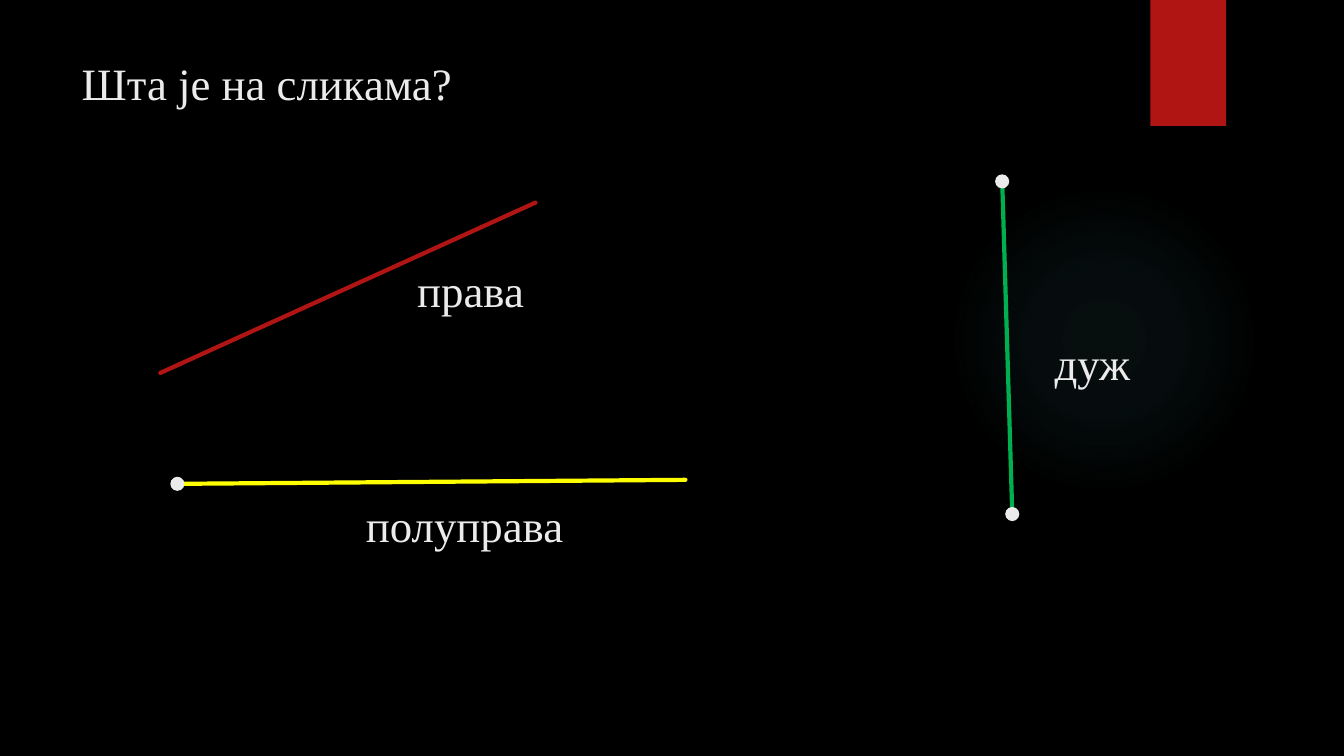
import pptx
import pptx.dml.color
import pptx.enum.shapes
import pptx.enum.text
import pptx.oxml
import pptx.oxml.ns
import pptx.util

WIDTH, HEIGHT = pptx.util.Inches(13.33), pptx.util.Inches(7.5)
FONT = "Times New Roman"
COLORS = {
    "background": "000000",
    "text": "EBEBEB",
    "red": "B01513",
    "yellow": "FFFF00",
    "green": "00B050",
    "glow": "50B9C1",
}
GLOW_STOPS = [(0, 7), (36, 6), (69, 0)]  # position and opacity in percent
DOT_WIDTH = 1.05  # percent of the slide's width
DOT_HEIGHT = DOT_WIDTH * WIDTH / HEIGHT


def color(name):
    return pptx.dml.color.RGBColor.from_string(COLORS[name])


def place(*shares):
    """Turn percentages of the slide's width and height, in turn, into lengths."""
    return [round((HEIGHT if index % 2 else WIDTH) * share / 100)
            for index, share in enumerate(shares)]


def add_plain_shape(slide, kind, box, fill):
    shape = slide.shapes.add_shape(kind, *place(*box))
    shape.shadow.inherit = False
    shape.fill.solid()
    shape.fill.fore_color.rgb = color(fill)
    shape.line.fill.background()
    return shape


def add_glow(slide, box):
    shape = add_plain_shape(slide, pptx.enum.shapes.MSO_SHAPE.OVAL, box, "glow")
    stops = "".join(
        f'<a:gs pos="{position * 1000}"><a:srgbClr val="{COLORS["glow"]}">'
        f'<a:alpha val="{opacity * 1000}"/></a:srgbClr></a:gs>'
        for position, opacity in GLOW_STOPS)
    gradient = pptx.oxml.parse_xml(
        f'<a:gradFill {pptx.oxml.ns.nsdecls("a")}><a:gsLst>{stops}</a:gsLst>'
        '<a:path path="circle"><a:fillToRect l="50000" t="50000" r="50000" '
        'b="50000"/></a:path></a:gradFill>')
    properties = shape._element.spPr
    solid = properties.find(pptx.oxml.ns.qn("a:solidFill"))
    properties.replace(solid, gradient)


def add_line(slide, start, end, line_color):
    line = slide.shapes.add_connector(
        pptx.enum.shapes.MSO_CONNECTOR.STRAIGHT, *place(*start, *end))
    line.line.color.rgb = color(line_color)
    line.line.width = pptx.util.Pt(3)
    line.line._ln.set("cap", "rnd")
    line._element.spPr.append(pptx.oxml.parse_xml(
        f'<a:effectLst {pptx.oxml.ns.nsdecls("a")}/>'))


def add_dot(slide, center):
    x, y = center
    box = (x - DOT_WIDTH / 2, y - DOT_HEIGHT / 2, DOT_WIDTH, DOT_HEIGHT)
    add_plain_shape(slide, pptx.enum.shapes.MSO_SHAPE.OVAL, box, "text")


def write_text(shape, text):
    frame = shape.text_frame
    frame.word_wrap = True
    frame.auto_size = pptx.enum.text.MSO_AUTO_SIZE.NONE
    frame.vertical_anchor = pptx.enum.text.MSO_ANCHOR.TOP
    paragraph = frame.paragraphs[0]
    paragraph.alignment = pptx.enum.text.PP_ALIGN.LEFT
    paragraph.line_spacing = 1.0
    paragraph.space_before = pptx.util.Pt(0)
    run = paragraph.add_run()
    run.text = text
    run.font.name = FONT
    run.font.size = pptx.util.Pt(32)
    run.font.color.rgb = color("text")


def add_label(slide, box, text):
    write_text(slide.shapes.add_textbox(*place(*box)), text)


def set_title(slide, box, text):
    title = slide.shapes.title
    title.left, title.top, title.width, title.height = place(*box)
    write_text(title, text)
    # Bring the title in front of the decoration
    slide.shapes._spTree.append(title._element)


def main():
    presentation = pptx.Presentation()
    presentation.slide_width, presentation.slide_height = WIDTH, HEIGHT
    slide = presentation.slides.add_slide(presentation.slide_layouts[5])
    slide.background.fill.solid()
    slide.background.fill.fore_color.rgb = color("background")

    # Decoration and title
    add_glow(slide, (70.6, 24.4, 23.1, 41.07))
    add_plain_shape(slide, pptx.enum.shapes.MSO_SHAPE.RECTANGLE,
                    (85.6, 0, 5.63, 16.67), "red")
    set_title(slide, (5.33, 6.67, 77.2, 11.87), "Шта је на сликама?")

    # Line without end points, ray with one, segment with two
    for start, end, line_color, dot_count in [
        ((39.84, 26.8), (11.93, 49.33), "red", 0),
        ((13.2, 64), (51, 63.47), "yellow", 1),
        ((75.32, 68), (74.57, 24), "green", 2),
    ]:
        add_line(slide, start, end, line_color)
        for center in (start, end)[:dot_count]:
            add_dot(slide, center)

    # Names of the figures
    for left, top, width, name in [
        (30.31, 34.13, 26.18, "права"),
        (26.48, 65.2, 26.18, "полуправа"),
        (77.72, 43.73, 22, "дуж"),
    ]:
        add_label(slide, (left, top, width, 11.87), name)

    presentation.save("out.pptx")


if __name__ == "__main__":
    main()
